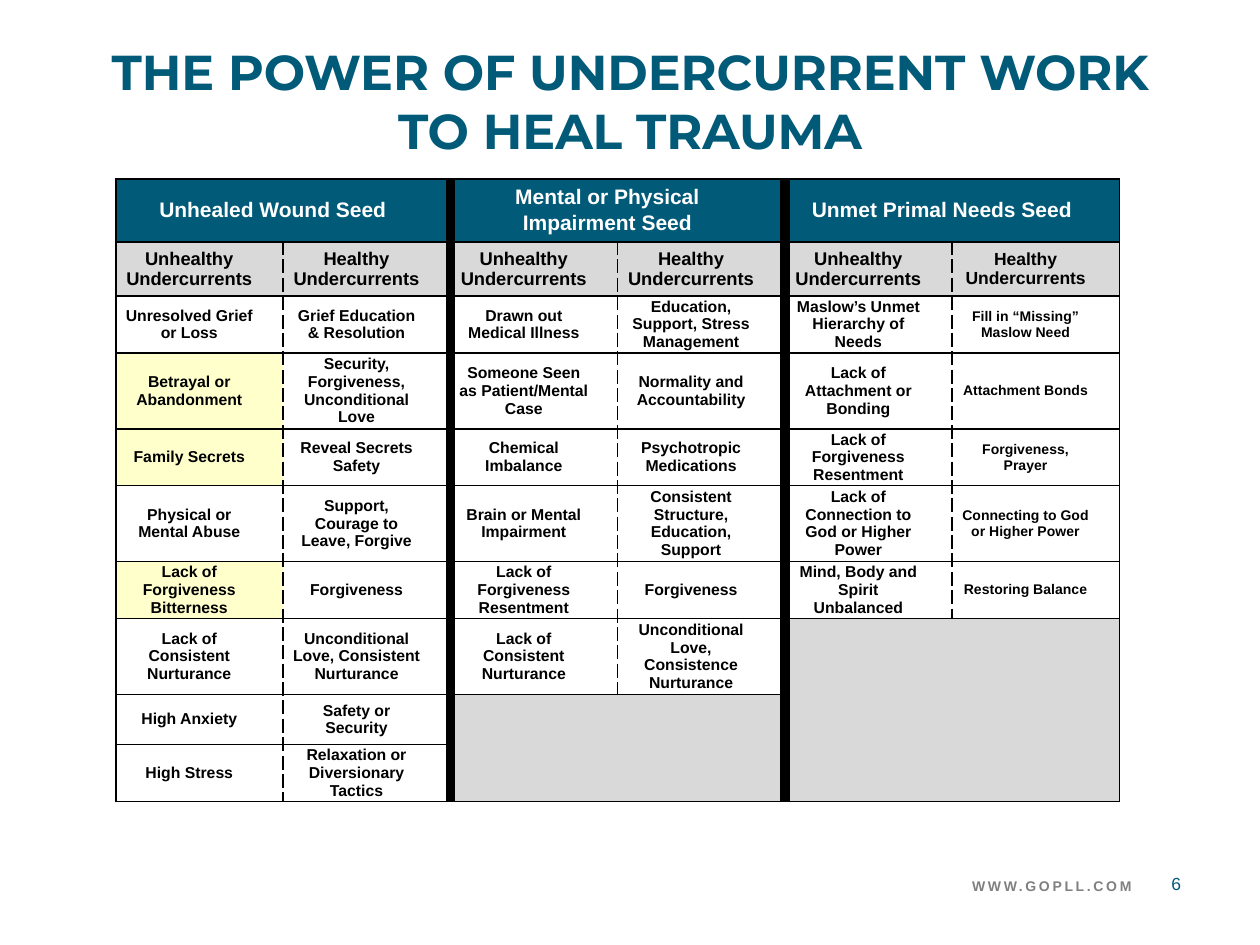
from pptx import Presentation
from pptx.dml.color import RGBColor
from pptx.enum.text import MSO_ANCHOR as ANCHOR, PP_ALIGN as ALIGN
from pptx.oxml.ns import qn
from pptx.util import Pt
from lxml.etree import SubElement

BLUE, GREY, YELLOW = "005A78", "D9D9D9", "FFFFCC"
WHITE, BLACK = "FFFFFF", "000000"
NO_GRID_STYLE = "{2D5ABB26-0587-4C30-8999-92F81FD0307C}"

TITLE = "THE POWER OF UNDERCURRENT WORK TO HEAL TRAUMA"
SEEDS = ["Unhealed Wound Seed", "Mental or Physical\nImpairment Seed",
         "Unmet Primal Needs Seed"]
KINDS = ["Unhealthy Undercurrents", "Healthy Undercurrents"]
UNDERCURRENTS = [
    ["Unresolved Grief or Loss", "Grief Education & Resolution",
     "Drawn out Medical Illness", "Education, Support, Stress Management",
     "Maslow’s Unmet Hierarchy of Needs", "Fill in “Missing” Maslow Need"],
    ["Betrayal or Abandonment", "Security, Forgiveness, Unconditional Love",
     "Someone Seen as Patient/Mental Case", "Normality and Accountability",
     "Lack of Attachment or Bonding", "Attachment Bonds"],
    ["Family Secrets", "Reveal Secrets Safety",
     "Chemical Imbalance", "Psychotropic Medications",
     "Lack of Forgiveness Resentment", "Forgiveness, Prayer"],
    ["Physical or Mental Abuse", "Support, Courage to Leave, Forgive",
     "Brain or Mental Impairment", "Consistent Structure, Education, Support",
     "Lack of Connection to God or Higher Power", "Connecting to God or Higher Power"],
    ["Lack of Forgiveness Bitterness", "Forgiveness",
     "Lack of Forgiveness Resentment", "Forgiveness",
     "Mind, Body and Spirit Unbalanced", "Restoring Balance"],
    ["Lack of Consistent Nurturance", "Unconditional Love, Consistent Nurturance",
     "Lack of Consistent Nurturance", "Unconditional Love, Consistence Nurturance"],
    ["High Anxiety", "Safety or Security"],
    ["High Stress", "Relaxation or Diversionary Tactics"],
]
HIGHLIGHTED = {"Betrayal or Abandonment", "Family Secrets",
               "Lack of Forgiveness Bitterness"}
ROW_HEIGHTS = [36, 31, 28, 41.8, 28, 41.8, 28, 41.8, 28.8, 28]
COL_WIDTH = 95.6


def rgb(value):
    """Turn a hex string into a colour."""
    return RGBColor.from_string(value)


class SlideBuilder:
    """Hold the text style and the current slide."""

    base = {"name": "Arial", "bold": True}

    def __init__(self, s):
        """Start on the given slide."""
        self.s = s

    def text(self, tf, text, color, align=ALIGN.CENTER, before=0, **fmt):
        """Fill a text frame with formatted paragraphs."""
        tf.word_wrap = True
        tf.vertical_anchor = ANCHOR.MIDDLE
        for i, line in enumerate(text.split("\n")):
            p = tf.add_paragraph() if i else tf.paragraphs[0]
            p.alignment = align
            if i:
                p.space_before = Pt(before)
            r = p.add_run()
            r.text = line
            r.font.color.rgb = rgb(color)
            for key, value in {**self.base, **fmt}.items():
                setattr(r.font, key, value)
        return r

    def title(self, text, x, y, w, h):
        """Place and format the title placeholder."""
        sp = self.s.shapes.title
        sp.left, sp.top, sp.width, sp.height = map(Pt, (x, y, w, h))
        self.text(sp.text_frame, text, BLUE, name="Montserrat", size=Pt(28))

    def label(self, text, x, y, w, h, color, spacing=0, **fmt):
        """Add a text box, with optional letter spacing."""
        tf = self.s.shapes.add_textbox(*map(Pt, (x, y, w, h))).text_frame
        r = self.text(tf, text, color, **fmt)
        if spacing:
            r.font._element.set("spc", str(int(spacing * 100)))

    def table(self, x, y, widths, heights):
        """Add a table with no built-in style."""
        frame = self.s.shapes.add_table(len(heights), len(widths), Pt(x), Pt(y),
                                        Pt(sum(widths)), Pt(sum(heights)))
        tbl = frame.table
        tbl.first_row = tbl.horz_banding = False
        frame._element.find(".//" + qn("a:tableStyleId")).text = NO_GRID_STYLE
        for col, w in zip(tbl.columns, widths):
            col.width = Pt(w)
        for row, h in zip(tbl.rows, heights):
            row.height = Pt(h)
        return tbl

    def border(self, cell, side, width, dash):
        """Draw one edge of a table cell."""
        ln = SubElement(cell._tc.get_or_add_tcPr(), qn("a:ln" + side), w=str(Pt(width)))
        fill = SubElement(ln, qn("a:solidFill"))
        SubElement(fill, qn("a:srgbClr"), val=BLACK)
        SubElement(ln, qn("a:prstDash"), val=dash)

    def cell(self, tbl, row, col, text="", fill=WHITE, color=BLACK, size=9, span=(1, 1)):
        """Fill, frame and merge the cell that starts at row and col."""
        last_row, last_col = row + span[0] - 1, col + span[1] - 1
        origin = tbl.cell(row, col)
        if span != (1, 1):
            origin.merge(tbl.cell(last_row, last_col))
        for i in range(row, last_row + 1):
            for j in range(col, last_col + 1):
                c = tbl.cell(i, j)
                first = c.is_merge_origin
                edges = [("L", j == col, column_line(col)),
                         ("R", first or j == last_col, column_line(last_col + 1)),
                         ("T", i == row, (1, "solid")),
                         ("B", first or i == last_row, (1, "solid"))]
                for side, outer, line in edges:
                    if outer:
                        self.border(c, side, *line)
                c.fill.solid()
                c.fill.fore_color.rgb = rgb(fill)
        margins = {"margin_left": 4.8, "margin_right": 16.5,
                   "margin_top": 0, "margin_bottom": 0}
        for key, value in margins.items():
            setattr(origin, key, Pt(value))
        origin.vertical_anchor = ANCHOR.MIDDLE
        if text:
            self.text(origin.text_frame, text, color, before=1.4, size=Pt(size))


def column_line(index):
    """Give width and dash of the vertical line before a column."""
    if index % 2:
        return 1, "dash"
    return (1 if index in (0, 6) else 6), "solid"


def main():
    """Build and save the slide."""
    prs = Presentation()
    prs.slide_width, prs.slide_height = Pt(720), Pt(540)
    b = SlideBuilder(prs.slides.add_slide(prs.slide_layouts[5]))
    b.title(TITLE, 36, 12.2, 648, 90)
    b.label("WWW.GOPLL.COM", 203.8, 496.8, 450, 18.7, "808080",
            spacing=1.5, align=ALIGN.RIGHT, size=Pt(8))
    b.label("6", 657.4, 491.8, 29.5, 26.6, BLUE, size=Pt(10), bold=False)

    tbl = b.table(66.2, 102.2, [COL_WIDTH] * 6, ROW_HEIGHTS)
    for i, seed in enumerate(SEEDS):
        b.cell(tbl, 0, 2 * i, seed, BLUE, WHITE, 12, (1, 2))
    for col, kind in enumerate(KINDS * 3):
        b.cell(tbl, 1, col, kind, GREY, size=10 if col == 5 else 10.5)
    for row, texts in enumerate(UNDERCURRENTS, 2):
        for col, text in enumerate(texts):
            fill = YELLOW if text in HIGHLIGHTED else WHITE
            b.cell(tbl, row, col, text, fill, size=8 if col == 5 else 9)
    b.cell(tbl, 7, 4, fill=GREY, span=(3, 2))
    b.cell(tbl, 8, 2, fill=GREY, span=(2, 2))
    prs.save("out.pptx")


if __name__ == "__main__":
    main()
